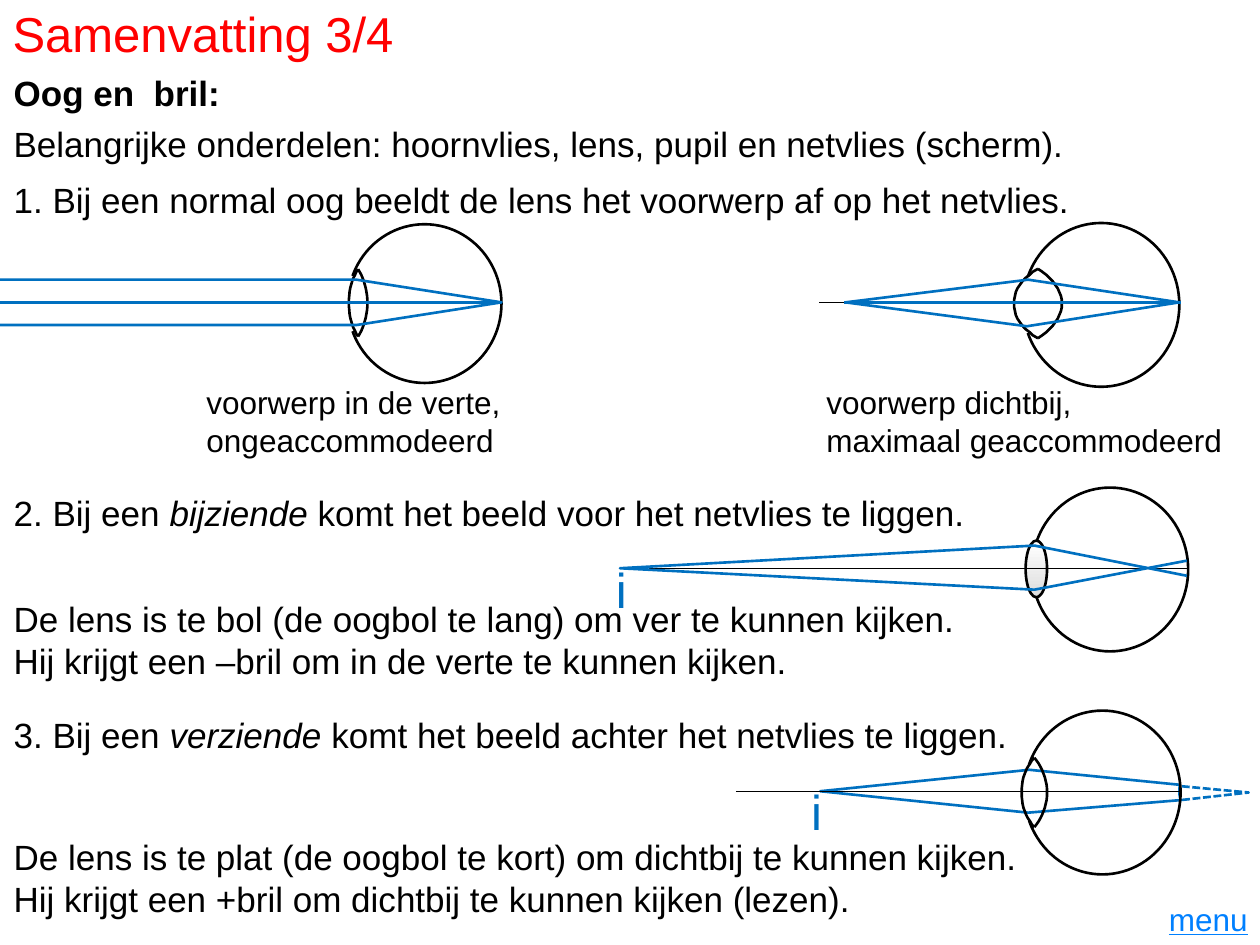
from lxml import etree
from pptx import Presentation
from pptx import util as u
from pptx.chart.data import XyChartData
from pptx.dml.color import RGBColor
from pptx.enum import chart as charts, dml, shapes, text
from pptx.oxml import parse_xml
from pptx.oxml.ns import nsdecls, qn

COLORS = {"title": "FF0000", "ink": "000000", "ray": "0070C0", "menu": "0080FF",
          "glass_top": "FFFFFF", "glass_bottom": "DDDDDD"}
FONT = "Arial"

LENS_Y = [100, 92, 83, 74, 64, 54, 44, 33, 22, 11, 0]
LENS_RIGHT = [0.71, 0.76, 0.81, 0.85, 0.89, 0.92, 0.95, 0.97, 0.99, 1, 1]
LENS_LEFT = [0.71, 0.65, 0.61, 0.56, 0.52, 0.49, 0.46, 0.44, 0.43, 0.42, 0.42]


def rgb(name):
    return RGBColor.from_string(COLORS[name])


def style_font(font, size, color="ink"):
    font.name, font.size = FONT, u.Pt(size)
    font.color.rgb = rgb(color)


def style_line(item, color, width=1.5):
    item.line.color.rgb = rgb(color)
    item.line.width = u.Pt(width)


def add_text(page, place, lines, size=20, color="ink"):
    """Each line is a string or a list of (words, italic) pairs."""
    box = page.shapes.add_textbox(*map(u.Inches, place))
    frame = box.text_frame
    frame.word_wrap = True
    for number, line in enumerate(lines):
        para = frame.paragraphs[0] if number == 0 else frame.add_paragraph()
        for words, italic in [(line, False)] if isinstance(line, str) else line:
            span = para.add_run()
            span.text = words
            style_font(span.font, size, color)
            span.font.italic = italic
    return box


def add_line(page, x1, x2, y, color="ink", width=0.75):
    line = page.shapes.add_connector(shapes.MSO_CONNECTOR.STRAIGHT,
                                     *map(u.Inches, (x1, y, x2, y)))
    style_line(line, color, width)
    etree.SubElement(line._element.spPr, qn("a:effectLst"))


def add_rays(page, points, close=False):
    (start, *rest) = [tuple(map(u.Inches, point)) for point in points]
    builder = page.shapes.build_freeform(*start)
    builder.add_line_segments(rest, close=close)
    rays = builder.convert_to_shape()
    rays.shadow.inherit = False
    rays.fill.background()
    style_line(rays, "ray")
    return rays


def add_eyeball(page, x, y, rx=0.62, ry=0.65):
    """Outline around centre x, y, open on the left for the lens."""
    eye = page.shapes.add_shape(shapes.MSO_SHAPE.ARC,
                                *map(u.Inches, (x - rx, y - ry, 2 * rx, 2 * ry)))
    for index, degrees in enumerate((201, 159)):
        eye.adjustments[index] = degrees * 0.6  # 60000 units a degree
    eye.shadow.inherit = False
    eye.fill.background()
    style_line(eye, "ink")


def add_oval(page, place):
    oval = page.shapes.add_shape(shapes.MSO_SHAPE.OVAL, *map(u.Inches, place))
    oval.shadow.inherit = False
    return oval


def add_glass_lens(page, place):
    lens = add_oval(page, place)
    lens.fill.gradient()
    lens.fill.gradient_angle = 270
    for stop, name in zip(lens.fill.gradient_stops, ("glass_top", "glass_bottom")):
        stop.color.rgb = rgb(name)
    style_line(lens, "ink")


def clear_chart_background(chart):
    empty = f'<c:spPr {nsdecls("c", "a")}><a:noFill/><a:ln><a:noFill/></a:ln></c:spPr>'
    chart_part = chart._chartSpace.find(qn("c:chart"))
    chart_part.addnext(parse_xml(empty))
    area = chart_part.find(qn("c:plotArea"))
    area.append(parse_xml(empty))
    for old in area.findall(qn("c:layout")):
        area.remove(old)
    values = {"x": 0.082, "y": 0.199, "w": 0.842, "h": 0.644}
    parts = "".join(f'<c:{key} val="{value}"/>' for key, value in values.items())
    area.insert(0, parse_xml(
        f'<c:layout {nsdecls("c")}><c:manualLayout><c:layoutTarget val="inner"/>'
        f'<c:xMode val="edge"/><c:yMode val="edge"/>{parts}'
        '</c:manualLayout></c:layout>'))


def add_lens_chart(page, place):
    data = XyChartData()
    heights = LENS_Y + [-y for y in LENS_Y[-2::-1]]
    for number, half in enumerate((LENS_RIGHT, LENS_LEFT), 1):
        series = data.add_series(f"Series {number}")
        for x, y in zip(half + half[-2::-1], heights):
            series.add_data_point(x, y)
    chart = page.shapes.add_chart(charts.XL_CHART_TYPE.XY_SCATTER_SMOOTH_NO_MARKERS,
                                  *map(u.Inches, place), data).chart
    chart.has_legend = chart.has_title = False
    chart.font.name, chart.font.size = "Times New Roman", u.Pt(10)
    chart.font.color.rgb = rgb("ink")
    chart.plots[0].vary_by_categories = False
    for axis, low, high in ((chart.category_axis, 0.3, 1.1),
                            (chart.value_axis, -112, 112)):
        axis.minimum_scale, axis.maximum_scale = low, high
        axis.has_major_gridlines = False
        axis.visible = False
    for series in chart.plots[0].series:
        series.smooth = True
        series.marker.style = charts.XL_MARKER_STYLE.NONE
        style_line(series.format, "ink")
    clear_chart_background(chart)


def add_object(page, place):
    """The letter i that stands for the object being looked at."""
    box = add_text(page, place, ["i"], 28, "ray")
    box.text_frame.margin_top = u.Inches(0.09)


def add_title(page):
    title = page.shapes.title
    title.left, title.top, title.width, title.height = map(
        u.Inches, (0, -0.02, 8.5, 0.57))
    frame = title.text_frame
    frame.text = "Samenvatting 3/4"
    frame.vertical_anchor = text.MSO_ANCHOR.MIDDLE
    frame.paragraphs[0].alignment = text.PP_ALIGN.LEFT
    style_font(frame.paragraphs[0].runs[0].font, 28, "title")


def add_statements(page):
    add_text(page, (0.01, 4.69, 9.97, 0.77), [
        "De lens is te bol (de oogbol te lang) om ver te kunnen kijken.",
        "Hij krijgt een –bril om in de verte te kunnen kijken."])
    add_text(page, (0.01, 6.58, 9.97, 0.77), [
        "De lens is te plat (de oogbol te kort) om dichtbij te kunnen kijken.",
        "Hij krijgt een +bril om dichtbij te kunnen kijken (lezen)."])
    heading = add_text(page, (0.01, 0.52, 2.01, 0.44), ["Oog en  bril:"])
    heading.text_frame.paragraphs[0].runs[0].font.bold = True
    add_text(page, (0.01, 0.92, 9.97, 0.44), [
        "Belangrijke onderdelen: hoornvlies, lens, pupil en netvlies (scherm)."])
    add_text(page, (0.01, 1.37, 8.74, 0.44), [
        "1. Bij een normal oog beeldt de lens het voorwerp af op het netvlies."])
    for top, width, number, kind, where in ((5.61, 8.13, 3, "verziende", "achter"),
                                            (3.85, 9.97, 2, "bijziende", "voor")):
        add_text(page, (0.01, top, width, 0.44), [[
            (f"{number}. Bij een ", False), (f"{kind} ", True),
            (f"komt het beeld {where} het netvlies te liggen.", False)]])


def draw_nearsighted_eye(page):
    add_glass_lens(page, (8.14, 4.29, 0.17, 0.45))
    add_eyeball(page, 8.81, 4.52)
    add_line(page, 5.15, 9.43, 4.51)
    add_object(page, (4.79, 4.35, 0.31, 0.28))
    add_rays(page, [(9.42, 4.57), (8.21, 4.33), (4.92, 4.51), (8.21, 4.68), (9.42, 4.45)])


def draw_normal_eyes(page):
    add_eyeball(page, 3.37, 2.41, 0.61, 0.63)
    add_lens_chart(page, (2.72, 1.92, 0.24, 0.93))
    add_line(page, -1.05, 3.99, 2.4)
    add_rays(page, [(-1.04, 2.22), (2.83, 2.22), (3.98, 2.4), (2.83, 2.58), (-1.02, 2.58)])
    add_line(page, -1.04, 3.98, 2.4, "ray", 1.5)
    add_eyeball(page, 8.74, 2.42)
    add_lens_chart(page, (7.92, 1.91, 0.62, 0.96))
    add_line(page, 6.5, 9.37, 2.4)
    add_rays(page, [(6.71, 2.4), (8.16, 2.22), (9.36, 2.4), (8.15, 2.59)], close=True)
    add_line(page, 6.7, 9.37, 2.4, "ray", 1.5)
    add_text(page, (1.54, 2.99, 2.65, 0.71),
             ["voorwerp in de verte,", "ongeaccommodeerd"], 18)
    add_text(page, (6.46, 2.99, 3.72, 0.71),
             ["voorwerp dichtbij,", "maximaal geaccommodeerd"], 18)


def draw_farsighted_eye(page):
    add_object(page, (6.34, 6.11, 0.33, 0.3))
    add_rays(page, [(9.37, 6.23), (8.17, 6.11), (6.51, 6.28), (8.16, 6.45), (9.38, 6.35)])
    spot = add_oval(page, (9.35, 6.22, 0.02, 0.12))
    spot.fill.solid()
    spot.fill.fore_color.rgb = rgb("ray")
    spot.line.fill.background()
    beyond = add_rays(page, [(9.38, 6.24), (9.91, 6.29), (9.37, 6.35)])
    beyond.line.dash_style = dml.MSO_LINE.SQUARE_DOT
    add_eyeball(page, 8.75, 6.29)
    add_lens_chart(page, (8.04, 5.79, 0.33, 0.96))
    add_line(page, 5.84, 9.36, 6.28)


def main():
    deck = Presentation()
    deck.slide_width, deck.slide_height = u.Inches(10), u.Inches(7.5)
    page = deck.slides.add_slide(deck.slide_layouts[5])
    add_title(page)
    add_statements(page)
    draw_nearsighted_eye(page)
    draw_normal_eyes(page)
    menu = add_text(page, (9.09, 7.09, 0.91, 0.4), ["menu"], 18, "menu")
    menu.text_frame.paragraphs[0].alignment = text.PP_ALIGN.RIGHT
    menu.text_frame.paragraphs[0].runs[0].font.underline = True
    draw_farsighted_eye(page)
    deck.save("out.pptx")


if __name__ == "__main__":
    main()
